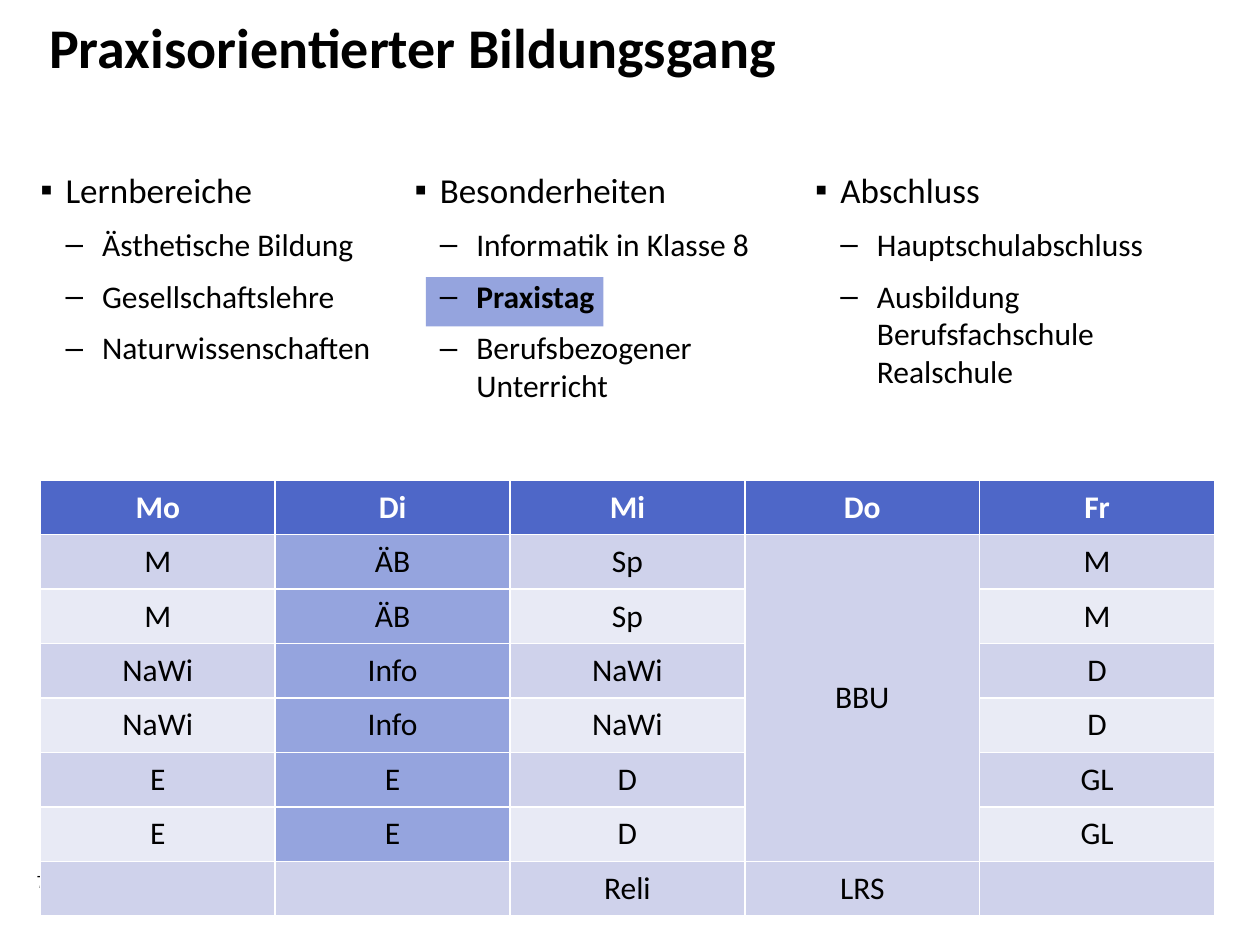
from lxml import etree
from pptx import Presentation
from pptx import util as u
from pptx.dml.color import RGBColor
from pptx.enum import shapes, text
from pptx.oxml.ns import qn


def paint(part, hue):
    part.fill.solid()
    part.fill.fore_color.rgb = RGBColor.from_string(hue)


def write(frame, words, size=18, bold=False, hue="000000", font="Calibri",
          align="LEFT", level=0, mark=None, gap=0, lead=None, inset=0.05, first=True):
    frame.margin_left = frame.margin_right = u.Inches(inset)
    frame.margin_top = frame.margin_bottom = u.Inches(inset)
    para = frame.paragraphs[0] if first else frame.add_paragraph()
    para.text = words
    para.level = level
    para.alignment = getattr(text.PP_ALIGN, align)
    para.space_before = u.Pt(gap)
    if lead:
        para.line_spacing = lead
    if mark:
        left, hang = [(0.2, 0.2), (0.49, 0.29)][level]
        props = para._p.get_or_add_pPr()
        props.set("marL", str(u.Inches(left)))
        props.set("indent", str(-u.Inches(hang)))
        etree.SubElement(props, qn("a:buFont")).set("typeface", "Arial")
        etree.SubElement(props, qn("a:buChar")).set("char", mark)
    for run in para.runs:
        run.font.name, run.font.size, run.font.bold = font, u.Pt(size), bold
        run.font.color.rgb = RGBColor.from_string(hue)


deck = Presentation()
deck.slide_width, deck.slide_height = u.Inches(10), u.Inches(7.5)
slide = deck.slides.add_slide(deck.slide_layouts[1])
title, body = slide.placeholders

title.left, title.top = u.Inches(0.34), 0
title.width, title.height = u.Inches(9.31), u.Inches(0.8)
title.text_frame.vertical_anchor = text.MSO_ANCHOR.MIDDLE
title.text_frame.auto_size = text.MSO_AUTO_SIZE.NONE
write(title.text_frame, "Praxisorientierter Bildungsgang", size=32, bold=True, lead=0.9)

page = slide.shapes.add_textbox(u.Inches(0.24), u.Inches(6.86), u.Inches(0.19), u.Inches(0.25))
page.text_frame.word_wrap = False
write(page.text_frame, "7", size=10, font="Arial")

key = slide.shapes.add_shape(shapes.MSO_SHAPE.RECTANGLE, u.Inches(3.38), u.Inches(2.2),
                             u.Inches(1.41), u.Inches(0.39))
key.shadow.inherit = False
key.line.fill.background()
paint(key, "95A4DE")

lists = [
    (0.32, 2.95, 2.03, "Lernbereiche",
     ["Ästhetische Bildung", "Gesellschaftslehre", "Naturwissenschaften"]),
    (3.29, 3.18, 2.37, "Besonderheiten",
     ["Informatik in Klasse 8", "Praxistag", "Berufsbezogener Unterricht"]),
    (6.47, 2.95, 1.81, "Abschluss",
     ["Hauptschulabschluss", "Ausbildung\vBerufsfachschule\vRealschule"]),
]
for num, (left, wide, high, head, items) in enumerate(lists):
    box = slide.shapes.add_textbox(0, 0, 0, 0) if num else body
    box.left, box.top = u.Inches(left), u.Inches(1.34)
    box.width, box.height = u.Inches(wide), u.Inches(high)
    frame = box.text_frame
    frame.word_wrap = True
    frame.auto_size = text.MSO_AUTO_SIZE.NONE
    write(frame, head, size=20, mark="▪", inset=0)
    for item in items:
        write(frame, item, bold=item == "Praxistag", level=1, mark="–", gap=8,
              inset=0, first=False)

plan = [
    ["Mo", "Di", "Mi", "Do", "Fr"],
    ["M", "ÄB", "Sp", "BBU", "M"],
    ["M", "ÄB", "Sp", "", "M"],
    ["NaWi", "Info", "NaWi", "", "D"],
    ["NaWi", "Info", "NaWi", "", "D"],
    ["E", "E", "D", "", "GL"],
    ["E", "E", "D", "", "GL"],
    ["", "", "Reli", "LRS", ""],
]
table = slide.shapes.add_table(len(plan), len(plan[0]), u.Inches(0.32), u.Inches(3.81),
                               u.Inches(9.32), u.Inches(3.46)).table
for row, names in enumerate(plan):
    for col, name in enumerate(names):
        cell = table.cell(row, col)
        cell.vertical_anchor = text.MSO_ANCHOR.MIDDLE
        if row == 0:
            fill = "4E67C8"
        elif col == 1 and row < 7:
            fill = "95A4DE"
        elif col == 4 and row < 7:
            fill = "D0D3EB" if row % 2 else "E9EBF5"
        else:
            fill = "CFD2EB" if row % 2 else "E8EAF5"
        paint(cell, fill)
        write(cell.text_frame, name, bold=row == 0, align="CENTER",
              hue="000000" if row else "FFFFFF")
        cell.margin_left = cell.margin_right = u.Inches(0.05)
        cell.margin_top = cell.margin_bottom = u.Inches(0.05)
table.cell(1, 3).merge(table.cell(6, 3))

deck.save("out.pptx")
